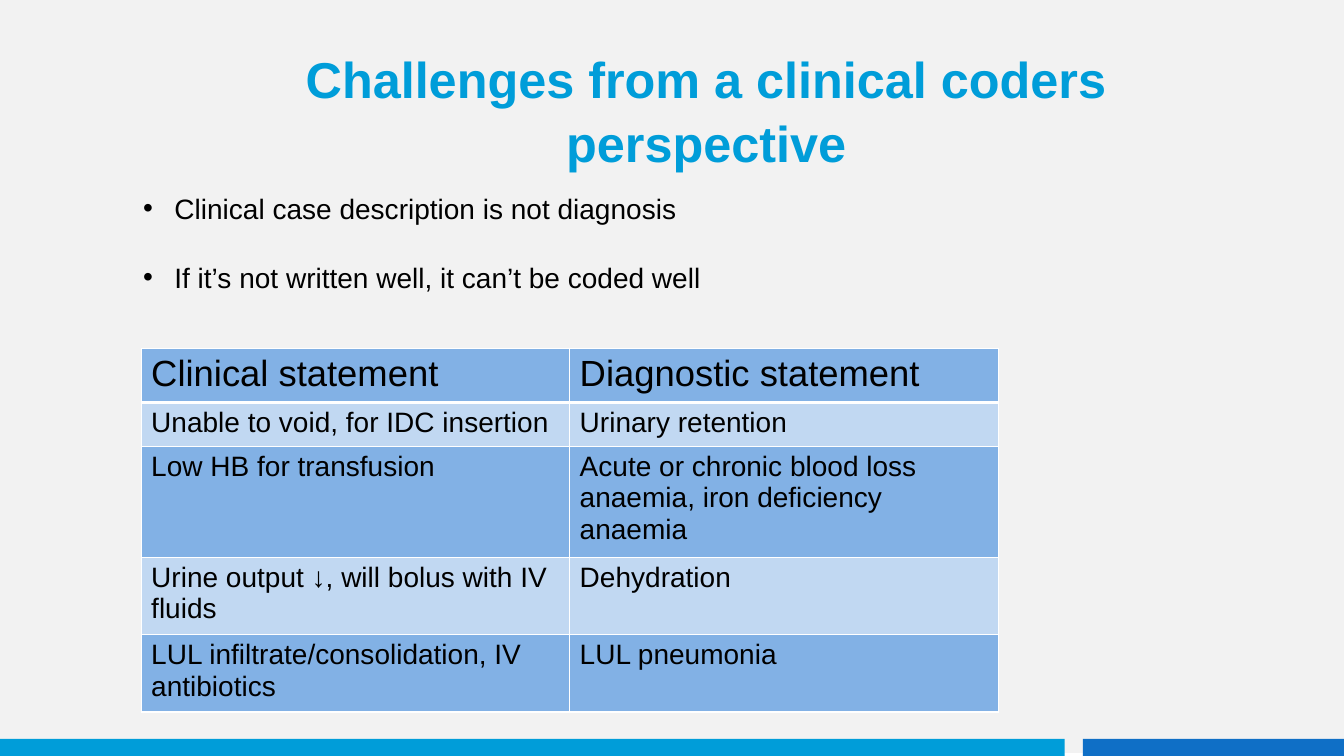
from dataclasses import dataclass

from lxml.etree import SubElement
from pptx import Presentation
from pptx.dml.color import RGBColor
from pptx.enum.shapes import MSO_SHAPE
from pptx.enum.text import MSO_ANCHOR, MSO_AUTO_SIZE, PP_ALIGN
from pptx.oxml.ns import qn
from pptx.util import Inches, Pt

BLACK = RGBColor(0x00, 0x00, 0x00)
WHITE = RGBColor(0xFF, 0xFF, 0xFF)
GREY = RGBColor(0xF2, 0xF2, 0xF2)
CYAN = RGBColor(0x00, 0x9D, 0xD9)
BLUE = RGBColor(0x0F, 0x6F, 0xC6)
MID = RGBColor(0x82, 0xB1, 0xE5)
PALE = RGBColor(0xC1, 0xD8, 0xF2)


@dataclass
class Panel:
    left: float
    top: float
    width: float
    height: float
    color: RGBColor


@dataclass
class Row:
    sign: str
    result: str
    height: float
    size: int = 20


PANELS = [
    Panel(0, -0.03, 13.33, 7.5, GREY),
    Panel(0, 7.33, 10.56, 0.17, CYAN),
    Panel(10.74, 7.33, 2.59, 0.17, BLUE),
]
POINTS = [
    "Clinical case description is not diagnosis",
    "If it’s not written well, it can’t be coded well",
]
ROWS = [
    Row("Clinical statement", "Diagnostic statement", 0.51, 26),
    Row("Unable to void, for IDC insertion", "Urinary retention", 0.41),
    Row("Low HB for transfusion",
        "Acute or chronic blood loss anaemia, iron deficiency anaemia", 1.03),
    Row("Urine output ↓, will bolus with IV fluids", "Dehydration", 0.72),
    Row("LUL infiltrate/consolidation, IV antibiotics", "LUL pneumonia", 0.72),
]


def write(frame, *lines: str, size: int = 20, color: RGBColor = BLACK,
          bold: bool = False, align=PP_ALIGN.LEFT, bullet: bool = False,
          gap: float = 0, pitch: float = 1) -> None:
    frame.word_wrap = True
    for index, line in enumerate(lines):
        para = frame.add_paragraph() if index else frame.paragraphs[0]
        para.text = line
        para.alignment = align
        para.line_spacing = pitch
        para.space_before = Pt(gap if index else 0)
        if bullet:
            props = para._p.get_or_add_pPr()
            props.set("marL", str(Inches(0.31)))
            props.set("indent", str(-Inches(0.31)))
            SubElement(props, qn("a:buFont"), typeface="Arial")
            SubElement(props, qn("a:buChar"), char="•")
        font = para.runs[0].font
        font.name = "Arial"
        font.size = Pt(size)
        font.bold = bold
        font.color.rgb = color


def place(shape, left: float, top: float, width: float, height: float) -> None:
    shape.left, shape.top = Inches(left), Inches(top)
    shape.width, shape.height = Inches(width), Inches(height)
    shape.text_frame.vertical_anchor = MSO_ANCHOR.TOP
    shape.text_frame.auto_size = MSO_AUTO_SIZE.SHAPE_TO_FIT_TEXT


def draw(slide, panel: Panel) -> None:
    shape = slide.shapes.add_shape(
        MSO_SHAPE.RECTANGLE, Inches(panel.left), Inches(panel.top),
        Inches(panel.width), Inches(panel.height))
    shape.shadow.inherit = False
    shape.fill.solid()
    shape.fill.fore_color.rgb = panel.color
    shape.line.fill.background()
    slide.shapes.title.element.addprevious(shape.element)


def edge(cell, head: bool, second: bool) -> None:
    props = cell._tc.get_or_add_tcPr()
    widths = {"L": 1, "R": 1, "T": 3 if second else 1, "B": 3 if head else 1}
    for side, width in widths.items():
        line = SubElement(props, qn(f"a:ln{side}"), w=str(Pt(width)))
        fill = SubElement(line, qn("a:solidFill"))
        SubElement(fill, qn("a:srgbClr"), val=str(WHITE))


def chart(slide, rows: list[Row]) -> None:
    total = sum(row.height for row in rows)
    table = slide.shapes.add_table(
        len(rows), 2, Inches(1.4), Inches(3.46), Inches(8.5), Inches(total)).table
    for index, row in enumerate(rows):
        table.rows[index].height = Inches(row.height)
        for col, words in enumerate((row.sign, row.result)):
            cell = table.cell(index, col)
            edge(cell, index == 0, index == 1)
            cell.fill.solid()
            cell.fill.fore_color.rgb = PALE if index % 2 else MID
            write(cell.text_frame, words, size=row.size)


def main() -> None:
    deck = Presentation()
    deck.slide_width, deck.slide_height = Inches(13.33), Inches(7.5)
    slide = deck.slides.add_slide(deck.slide_layouts[1])
    for panel in PANELS:
        draw(slide, panel)
    title, body = slide.shapes.title, slide.placeholders[1]
    place(title, 2, 0.4, 10.01, 1.31)
    write(title.text_frame, "Challenges from a clinical coders perspective",
          size=36, color=CYAN, bold=True, align=PP_ALIGN.CENTER, pitch=1.05)
    place(body, 1.32, 1.83, 6.67, 1.11)
    write(body.text_frame, *POINTS, bullet=True, gap=24, pitch=1.05)
    chart(slide, ROWS)
    deck.save("out.pptx")


if __name__ == "__main__":
    main()
